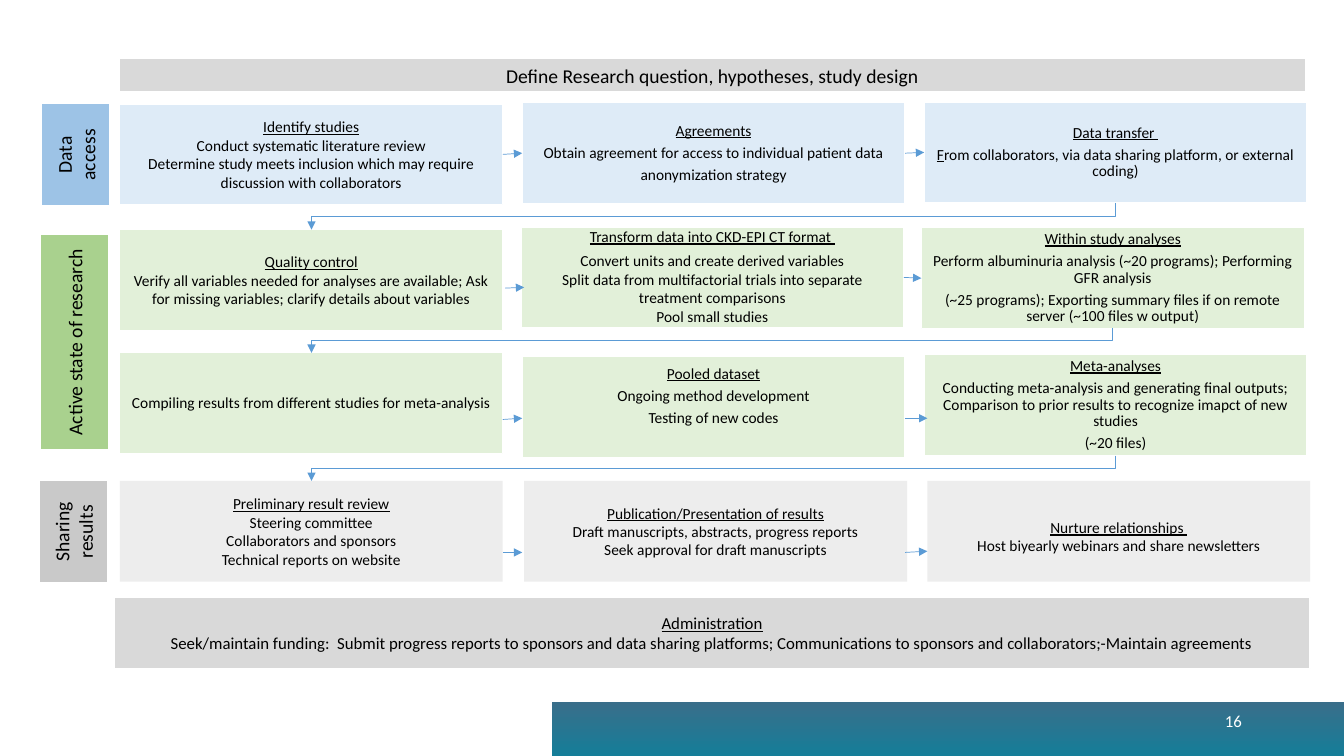
from lxml.etree import SubElement
from pptx import Presentation
from pptx.dml.color import RGBColor
from pptx.enum.shapes import MSO_CONNECTOR as Connector, MSO_SHAPE as Preset
from pptx.enum.text import MSO_ANCHOR as Anchor, PP_ALIGN as Align
from pptx.oxml.ns import qn
from pptx.util import Cm, Pt


def color(value):
    return RGBColor.from_string(value)


class WorkflowSlide:
    """Draws the elements of the research workflow in one style."""
    font_name = "Calibri"
    arrow_color = "5B9BD5"
    box_size = (9.65, 2.54)
    box_insets = (0.23, 0.23, 0.23, 0.23)
    plain_insets = (0.25, 0.13, 0.25, 0.13)

    def __init__(self, slide):
        self.slide = slide

    def set_text(self, shape, texts, size=11, heading=False, spaced=0,
                 insets=plain_insets, align=Align.CENTER, ink="000000"):
        frame = shape.text_frame
        frame.word_wrap = True
        frame.vertical_anchor = Anchor.MIDDLE
        (frame.margin_left, frame.margin_top,
         frame.margin_right, frame.margin_bottom) = map(Cm, insets)
        for index, text in enumerate(texts):
            paragraph = frame.paragraphs[0] if index == 0 else frame.add_paragraph()
            paragraph.alignment = align
            if index < spaced:
                paragraph.line_spacing = 0.9
                paragraph.space_after = Pt(3.85)
            font = paragraph.font
            font.name, font.size = self.font_name, Pt(size)
            font.color.rgb = color(ink)
            if isinstance(text, tuple):
                for position, part in enumerate(text):
                    run = paragraph.add_run()
                    run.text = part
                    run.font.underline = position == 0
            else:
                paragraph.add_run().text = text
                font.underline = heading and index == 0

    def box(self, left, top, width, height, fill, texts, outlined=False,
            rotation=0, preset=Preset.FLOWCHART_PROCESS, **style):
        shape = self.slide.shapes.add_shape(
            preset, Cm(left), Cm(top), Cm(width), Cm(height))
        shape.shadow.inherit = False
        shape.rotation = rotation
        shape.fill.solid()
        shape.fill.fore_color.rgb = color(fill)
        if outlined:
            shape.line.color.rgb = color("FFFFFF")
            shape.line.width = Pt(1)
        else:
            shape.line.fill.background()
        self.set_text(shape, texts, **style)
        return shape

    def step(self, left, top, fill, texts, **style):
        return self.box(left, top, *self.box_size, fill, texts, **style)

    def arrow(self, left, top, right, bottom, kind=Connector.STRAIGHT):
        connector = self.slide.shapes.add_connector(
            kind, Cm(left), Cm(top), Cm(right), Cm(bottom))
        connector.line.color.rgb = color(self.arrow_color)
        connector.line.width = Pt(0.5)
        properties = connector._element.spPr
        SubElement(properties.find(qn("a:ln")), qn("a:tailEnd"), type="triangle")
        SubElement(properties, qn("a:effectLst"))
        return connector

    def join(self, source, target):
        connector = self.arrow(0, 0, 1, 1)
        connector.begin_connect(source, 3)
        connector.end_connect(target, 1)

    def elbow(self, start, top, end, bottom):
        span, drop = start - end, bottom - top
        left = (start + end - drop) / 2
        upper = (top + bottom - span) / 2
        connector = self.arrow(left, upper, left + drop, upper + span, Connector.ELBOW)
        connector._element.spPr.find(qn("a:xfrm")).set("rot", str(90 * 60000))

    def gradient_bar(self, left, top, width, height, colors):
        bar = self.slide.shapes.add_shape(
            Preset.RECTANGLE, Cm(left), Cm(top), Cm(width), Cm(height))
        bar.shadow.inherit = False
        bar.line.fill.background()
        bar.fill.gradient()
        bar.fill.gradient_angle = 270
        for stop, value in zip(bar.fill.gradient_stops, colors):
            stop.color.rgb = color(value)

    def page_number(self, left, top, width, height, number):
        label = self.slide.shapes.add_textbox(Cm(left), Cm(top), Cm(width), Cm(height))
        self.set_text(label, [number], size=12, align=Align.RIGHT, ink="FFFFFF")


BLUE, GREEN, GRAY = "DEEBF7", "E2F0D9", "EDEDED"

STEPS = [
    (3.02, 2.62, BLUE, 0, [
        "Identify studies", "Conduct systematic literature review",
        "Determine study meets inclusion which may require discussion with collaborators"]),
    (13.16, 2.59, BLUE, 3, [
        "Agreements", "Obtain agreement for access to individual patient data",
        "anonymization strategy"]),
    (23.29, 2.57, BLUE, 2, [
        "Data transfer ",
        ("F", "rom collaborators, via data sharing platform, or external coding)")]),
    (3.02, 5.79, GREEN, 0, [
        "Quality control",
        "Verify all variables needed for analyses are available; Ask for missing "
        "variables; clarify details about variables"]),
    (13.13, 5.72, GREEN, 1, [
        "Transform data into CKD-EPI CT format ",
        "Convert units and create derived variables",
        "Split data from multifactorial trials into separate treatment comparisons",
        "Pool small studies"]),
    (23.22, 5.74, GREEN, 3, [
        "Within study analyses",
        "Perform albuminuria analysis (~20 programs); Performing GFR analysis",
        "(~25 programs); Exporting summary files if on remote server (~100 files w output)"]),
    (23.29, 8.94, GREEN, 3, [
        "Meta-analyses",
        "Conducting meta-analysis and generating final outputs; Comparison to prior "
        "results to recognize imapct of new studies",
        "(~20 files)"]),
]
RESULTS = [
    (3.02, WorkflowSlide.plain_insets, [
        "Preliminary result review", "Steering committee",
        "Collaborators and sponsors", "Technical reports on website"]),
    (13.21, WorkflowSlide.plain_insets, [
        "Publication/Presentation of results",
        "Draft manuscripts, abstracts, progress reports",
        "Seek approval for draft manuscripts"]),
    (23.37, (0.25, 0.25, 0.25, 0), [
        "Nurture relationships ", "Host biyearly webinars and share newsletters"]),
]
PHASES = [
    (0.64, 3.05, 2.54, "9DC3E6", "Data access"),
    (-0.81, 7.77, 5.38, "A9D18E", "Active state of research"),
    (0.58, 12.55, 2.54, "C9C9C9", "Sharing results"),
]
ROW_BREAKS = [(28.12, 5.11, 5.79), (28.04, 8.26, 8.89), (28.12, 11.48, 12.12)]
FREE_ARROWS = [
    (12.73, 7.26, 13.21, 7.24), (12.67, 10.57, 13.16, 10.54),
    (22.81, 10.54, 23.37, 10.54), (12.67, 13.92, 13.16, 13.92),
    (22.81, 13.92, 23.37, 13.89),
]


def main():
    presentation = Presentation()
    presentation.slide_width, presentation.slide_height = Cm(33.87), Cm(19.05)
    workflow = WorkflowSlide(presentation.slides.add_slide(presentation.slide_layouts[6]))

    workflow.gradient_bar(13.9, 17.7, 19.97, 1.35, ["396E8A", "157E99"])
    workflow.box(3.02, 1.5, 29.87, 0.79, "D9D9D9",
                 ["Define Research question, hypotheses, study design"], size=14)
    for left, top, width, fill, text in PHASES:
        workflow.box(left, top, width, 1.7, fill, [text], rotation=270, size=14)

    steps = [
        workflow.step(left, top, fill, texts, spaced=spaced, heading=True,
                      outlined=True, insets=workflow.box_insets)
        for left, top, fill, spaced, texts in STEPS
    ]
    workflow.step(3.02, 8.89, GREEN,
                  ["Compiling results from different studies for meta-analysis"],
                  spaced=1, outlined=True, insets=workflow.box_insets)
    workflow.step(13.16, 8.99, GREEN,
                  ["Pooled dataset", "Ongoing method development", "Testing of new codes"],
                  spaced=3, heading=True, outlined=True, insets=(0.23, 0.23, 0.23, 0.79))
    for left, insets, texts in RESULTS:
        workflow.step(left, 12.12, GRAY, texts, heading=True, insets=insets,
                      preset=Preset.RECTANGLE)
    workflow.box(2.87, 15.06, 30.15, 1.78, "D9D9D9", [
        "Administration",
        "Seek/maintain funding:  Submit progress reports to sponsors and data sharing "
        "platforms; Communications to sponsors and collaborators;-Maintain agreements",
    ], size=12, heading=True, outlined=True, preset=Preset.RECTANGLE)

    for source, target in [(0, 1), (1, 2), (4, 5)]:
        workflow.join(steps[source], steps[target])
    for ends in FREE_ARROWS:
        workflow.arrow(*ends)
    for start, top, bottom in ROW_BREAKS:
        workflow.elbow(start, top, 7.85, bottom)
    workflow.page_number(23.93, 17.65, 7.62, 1.02, "16")
    presentation.save("out.pptx")


if __name__ == "__main__":
    main()
